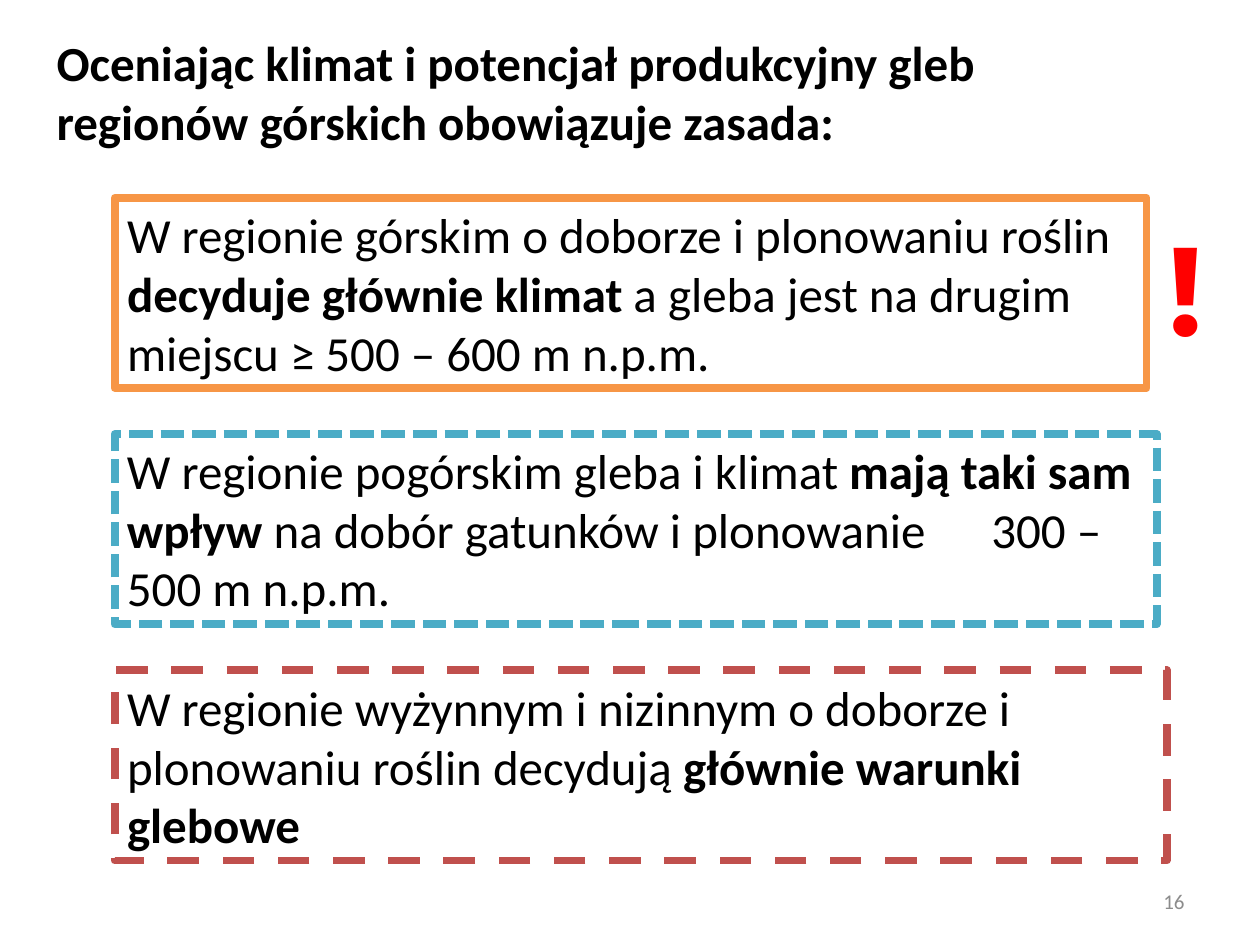
from lxml import etree
from pptx import Presentation, util as u
from pptx.dml.color import RGBColor
from pptx.enum import dml, shapes, text
from pptx.oxml.ns import qn

BLACK = RGBColor(0x00, 0x00, 0x00)
WHITE = RGBColor(0xFF, 0xFF, 0xFF)
ORANGE = RGBColor(0xF7, 0x96, 0x46)
TEAL = RGBColor(0x4B, 0xAC, 0xC6)
BRICK = RGBColor(0xC0, 0x50, 0x4D)
GREY = RGBColor(0x8C, 0x8C, 0x8C)
RED = RGBColor(0xFF, 0x00, 0x00)
TOP, MIDDLE = text.MSO_ANCHOR.TOP, text.MSO_ANCHOR.MIDDLE
LEFT, RIGHT = text.PP_ALIGN.LEFT, text.PP_ALIGN.RIGHT
BODY = {"name": "Calibri", "size": u.Pt(28), "bold": False}

prs = Presentation()
prs.slide_width, prs.slide_height = u.Inches(10), u.Inches(7.5)
slide = prs.slides.add_slide(prs.slide_layouts[6])


def write(shape, runs, color=BLACK, anchor=TOP, align=LEFT, **font_format):
    """Fill the shape with one paragraph of (words, bold) runs."""
    frame = shape.text_frame
    frame.word_wrap = True
    frame.vertical_anchor = anchor
    paragraph = frame.paragraphs[0]
    paragraph.alignment = align
    for words, bold in runs:
        run = paragraph.add_run()
        run.text = words
        for key, value in {**BODY, **font_format, "bold": bold}.items():
            setattr(run.font, key, value)
        run.font.color.rgb = color
    return paragraph


def text_area(left, top, width, height):
    return slide.shapes.add_textbox(*map(u.Inches, (left, top, width, height)))


write(text_area(0.35, 0.21, 8.98, 1.04),
      [("Oceniając klimat i potencjał produkcyjny gleb regionów górskich "
        "obowiązuje zasada:", True)])

# One framed rule per region, from the mountains down to the lowlands
RULE_LEFT, RULE_TOP, RULE_HEIGHT, RULE_STEP = 0.91, 1.57, 1.51, 1.875
rules = [
    (8.19, ORANGE, dml.MSO_LINE.SOLID, MIDDLE, [
        ("W regionie górskim o doborze i plonowaniu roślin ", False),
        ("decyduje głównie klimat", True),
        (" a gleba jest na drugim miejscu ≥ 500 – 600 m n.p.m.", False)]),
    (8.27, TEAL, dml.MSO_LINE.SQUARE_DOT, TOP, [
        ("W regionie pogórskim gleba i klimat ", False),
        ("mają taki sam wpływ", True),
        (" na dobór gatunków i plonowanie\t300 – 500 m n.p.m.", False)]),
    (8.35, BRICK, dml.MSO_LINE.DASH, MIDDLE, [
        ("W regionie wyżynnym i nizinnym o doborze i plonowaniu roślin decydują ", False),
        ("głównie warunki glebowe", True)]),
]
for row, (width, color, dash, anchor, runs) in enumerate(rules):
    frame = slide.shapes.add_shape(
        shapes.MSO_SHAPE.RECTANGLE, u.Inches(RULE_LEFT),
        u.Inches(RULE_TOP + row * RULE_STEP), u.Inches(width), u.Inches(RULE_HEIGHT))
    frame.shadow.inherit = False
    frame.fill.solid()
    frame.fill.fore_color.rgb = WHITE
    frame.line.color.rgb = color
    frame.line.width = u.Pt(4.5)
    frame.line.dash_style = dash
    paragraph = write(frame, runs, anchor=anchor)
    if any("\t" in words for words, _ in runs):
        tabs = etree.SubElement(paragraph._p.get_or_add_pPr(), qn("a:tabLst"))
        etree.SubElement(tabs, qn("a:tab"), pos=str(u.Inches(6.86)), algn="l")

write(text_area(7.17, 6.95, 2.33, 0.4), [("16", False)], GREY, MIDDLE, RIGHT,
      size=u.Pt(12))
write(text_area(9.17, 1.62, 0.47, 1.31), [("!", True)], RED,
      name="Montserrat", size=u.Pt(72))

prs.save("out.pptx")
